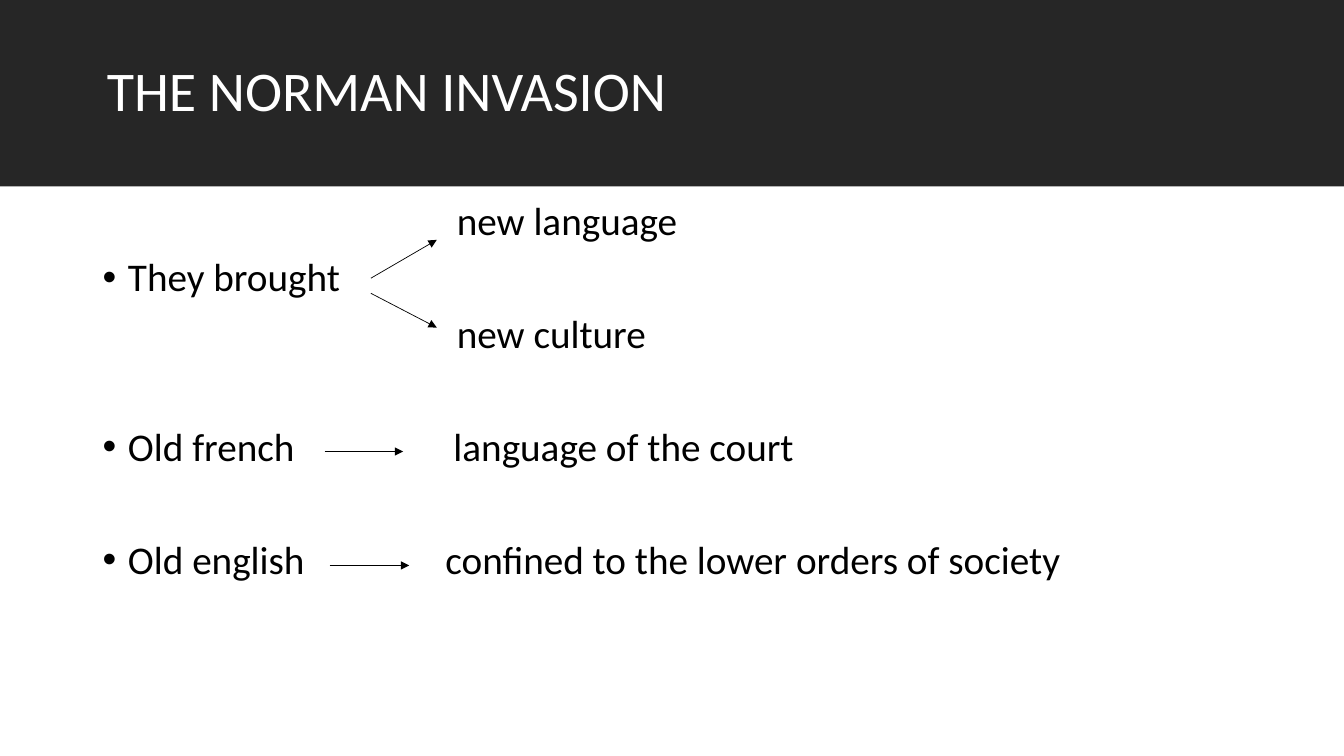
from dataclasses import dataclass

from lxml import etree
from pptx import Presentation, util as u
from pptx.dml.color import RGBColor
from pptx.enum import shapes, text
from pptx.oxml.ns import qn

WIDTH, HEIGHT = u.Inches(13.333), u.Inches(7.5)
FONT = "Calibri"
BLACK, WHITE, CHARCOAL = "000000", "FFFFFF", "262626"
ROW_GAP = 10  # points before each row
ROW_PITCH = 40.5  # points from one row to the next
BULLET_INDENT = 1.88


@dataclass
class Statement:
    subject: str
    detail: str
    detail_column: float
    rows_skipped: int = 0


@dataclass
class Arrow:
    start: tuple[float, float]
    end: tuple[float, float]


STATEMENTS = [
    Statement("", "new language", 26.35),
    Statement("They brought", "", 0),
    Statement("", "new culture", 26.35),
    Statement("Old french", "language of the court", 26.1, 1),
    Statement("Old english", "confined to the lower orders of society", 25.5, 1),
]
ARROWS = [
    Arrow((27.6, 36.8), (32.5, 31.73)),
    Arrow((27.6, 38.8), (32.5, 43.33)),
    Arrow((24.15, 59.73), (30, 59.73)),
    Arrow((24.52, 74.8), (30.45, 74.8)),
]


def across(columns: float) -> int:
    """Length of columns, each a hundredth of the slide's width."""
    return round(WIDTH * columns / 100)


def down(rows: float) -> int:
    """Length of rows, each a hundredth of the slide's height."""
    return round(HEIGHT * rows / 100)


def colour(value: str) -> RGBColor:
    return RGBColor.from_string(value)


def place(shape, left: float, top: float, width: float, height: float) -> None:
    shape.left, shape.top = across(left), down(top)
    shape.width, shape.height = across(width), down(height)


def add_run(paragraph, words: str, size: float, ink: str) -> None:
    run = paragraph.add_run()
    run.text = words
    run.font.name, run.font.size = FONT, u.Pt(size)
    run.font.color.rgb = colour(ink)


def fill_title(title) -> None:
    place(title, 0, 0, 100, 24.67)
    title.fill.solid()
    title.fill.fore_color.rgb = colour(CHARCOAL)
    frame = title.text_frame
    frame.auto_size = text.MSO_AUTO_SIZE.NONE
    frame.vertical_anchor = text.MSO_ANCHOR.MIDDLE
    frame.margin_left = across(7.95)
    heading = frame.paragraphs[0]
    heading.alignment = text.PP_ALIGN.LEFT
    heading.line_spacing = 0.9
    add_run(heading, "THE NORMAN INVASION", 40, WHITE)


def indent(paragraph, statement: Statement) -> None:
    """Bullet a subject and tab to its detail; indent a detail that stands alone."""
    properties = paragraph._p.get_or_add_pPr()
    if not statement.subject:
        properties.set("marL", str(across(statement.detail_column)))
        properties.set("indent", "0")
        return
    properties.set("marL", str(across(BULLET_INDENT)))
    properties.set("indent", str(-across(BULLET_INDENT)))
    etree.SubElement(properties, qn("a:buFont"), typeface="Arial")
    etree.SubElement(properties, qn("a:buChar"), char="•")
    if statement.detail:
        stops = etree.SubElement(properties, qn("a:tabLst"))
        etree.SubElement(stops, qn("a:tab"),
                         pos=str(across(statement.detail_column)), algn="l")


def add_statements(slide) -> None:
    body = slide.shapes.add_textbox(0, 0, 0, 0)
    place(body, 6.9, 26, 86.25, 63.47)
    frame = body.text_frame
    frame.word_wrap = True
    for number, statement in enumerate(STATEMENTS):
        paragraph = frame.add_paragraph() if number else frame.paragraphs[0]
        indent(paragraph, statement)
        paragraph.line_spacing = 0.9
        if number:
            paragraph.space_before = u.Pt(ROW_GAP + ROW_PITCH * statement.rows_skipped)
        words = "\t".join(filter(None, (statement.subject, statement.detail)))
        add_run(paragraph, words, 28, BLACK)


def add_arrow(slide, arrow: Arrow) -> None:
    (x1, y1), (x2, y2) = arrow.start, arrow.end
    line = slide.shapes.add_connector(shapes.MSO_CONNECTOR.STRAIGHT,
                                      across(x1), down(y1), across(x2), down(y2))
    line.line.color.rgb = colour(BLACK)
    line.line.width = u.Pt(0.5)
    etree.SubElement(line.line._get_or_add_ln(), qn("a:tailEnd"), type="triangle")
    etree.SubElement(line._element.spPr, qn("a:effectLst"))


def main() -> None:
    deck = Presentation()
    deck.slide_width, deck.slide_height = WIDTH, HEIGHT
    slide = deck.slides.add_slide(deck.slide_layouts[5])
    fill_title(slide.shapes.title)
    add_statements(slide)
    for arrow in ARROWS:
        add_arrow(slide, arrow)
    deck.save("out.pptx")


if __name__ == "__main__":
    main()
